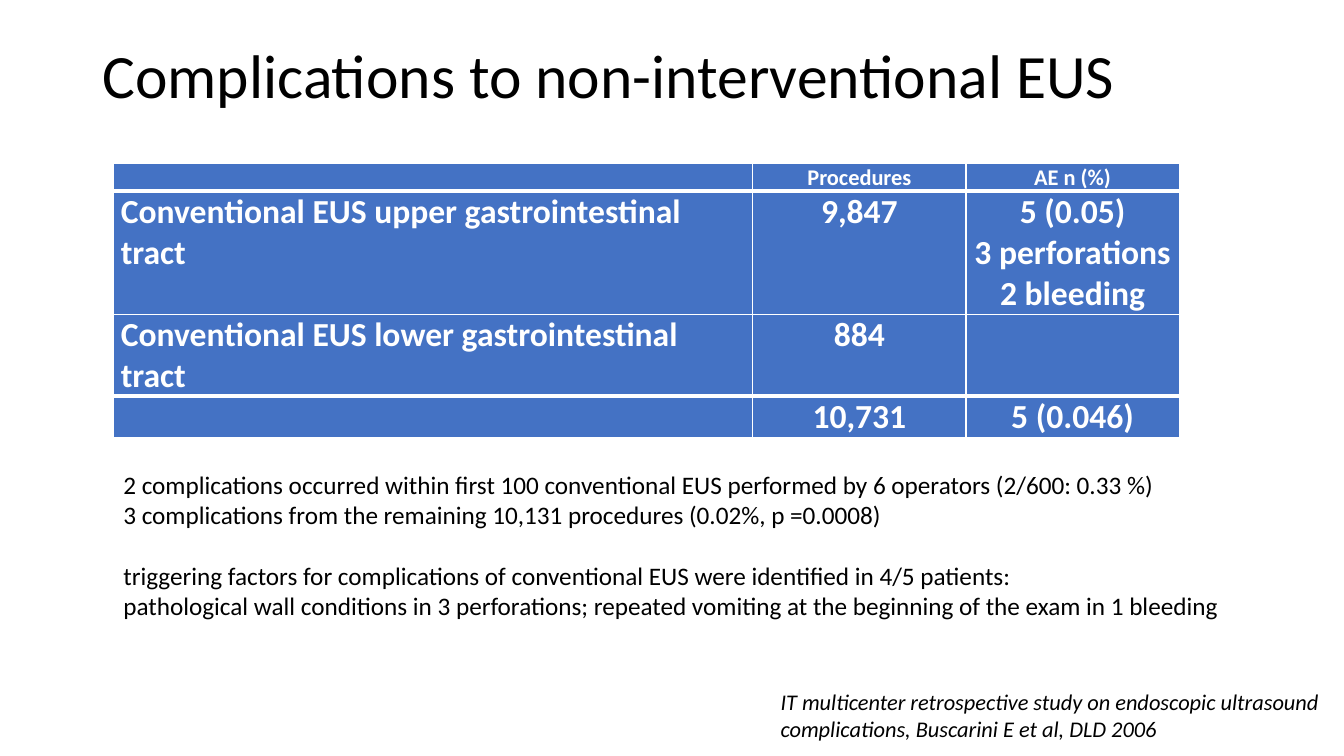
from lxml import etree
from pptx import Presentation
from pptx.dml.color import RGBColor
from pptx.enum.text import MSO_ANCHOR, MSO_AUTO_SIZE, PP_ALIGN
from pptx.oxml.ns import qn
from pptx.util import Pt

LEFT, CENTER = PP_ALIGN.LEFT, PP_ALIGN.CENTER
TOP = MSO_ANCHOR.TOP
NO_FIT, GROW = MSO_AUTO_SIZE.NONE, MSO_AUTO_SIZE.SHAPE_TO_FIT_TEXT
PX = 9525  # EMU per px, 96 px to the inch
FONT = "Calibri"
BLACK, WHITE, BLUE = "000000", "FFFFFF", "4472C4"


def color(hex_code):
    return RGBColor.from_string(hex_code)


def write(frame, lines, size, ink=BLACK, align=LEFT, bold=False, italic=False):
    frame.text = "\n".join(lines)
    for para in frame.paragraphs:
        para.alignment = align
        para.font.name = FONT
        para.font.size = Pt(size)
        para.font.bold = bold
        para.font.italic = italic
        para.font.color.rgb = color(ink)


deck = Presentation()
deck.slide_width, deck.slide_height = 1280 * PX, 720 * PX
page = deck.slides.add_slide(deck.slide_layouts[5])

# Title
title = page.shapes.title
title.left, title.top, title.width, title.height = [n * PX for n in (88, 38, 1104, 139)]
write(title.text_frame, ["Complications to non-interventional EUS"], 44)
title.text_frame.auto_size = NO_FIT
title.text_frame.vertical_anchor = TOP
title.text_frame.paragraphs[0].line_spacing = 0.9

# Table of procedures and adverse events
ROWS = [
    ["", "Procedures", "AE n (%)"],
    ["Conventional EUS upper gastrointestinal tract", "9,847",
     "5 (0.05)\n3 perforations\n2 bleeding"],
    ["Conventional EUS lower gastrointestinal tract", "884", ""],
    ["", "10,731", "5 (0.046)"],
]
COLUMN_WIDTHS = [609, 203, 203]
ROW_HEIGHTS = [26, 117, 78, 39]
THICK_RULES = (1, 3)  # below the header and above the totals

table = page.shapes.add_table(
    len(ROWS), len(COLUMN_WIDTHS), 108 * PX, 156 * PX,
    sum(COLUMN_WIDTHS) * PX, sum(ROW_HEIGHTS) * PX).table
table.first_row = table.horz_banding = False
for column, width in zip(table.columns, COLUMN_WIDTHS):
    column.width = width * PX

for r, (values, height) in enumerate(zip(ROWS, ROW_HEIGHTS)):
    table.rows[r].height = height * PX
    size = 16 if r == 0 else 24
    for c, value in enumerate(values):
        cell = table.cell(r, c)
        cell.margin_left = cell.margin_right = 7 * PX
        cell.margin_top = cell.margin_bottom = 0
        write(cell.text_frame, value.split("\n"), size, WHITE,
              CENTER if c else LEFT, bold=True)
        if not value:  # an empty cell keeps the row's text size
            end = etree.SubElement(cell.text_frame.paragraphs[0]._p, qn("a:endParaRPr"))
            end.set("sz", str(size * 100))

        # Cell borders
        properties = cell._tc.get_or_add_tcPr()
        top = 3 if r in THICK_RULES else 1
        bottom = 3 if r + 1 in THICK_RULES else 1
        for side, weight in (("L", 1), ("R", 1), ("T", top), ("B", bottom)):
            line = etree.SubElement(properties, qn("a:ln" + side), w=str(Pt(weight)))
            paint = etree.SubElement(line, qn("a:solidFill"))
            etree.SubElement(paint, qn("a:srgbClr"), val=WHITE)
        cell.fill.solid()
        cell.fill.fore_color.rgb = color(BLUE)

# Source of the study
source = page.shapes.add_textbox(734 * PX, 651 * PX, 588 * PX, 61 * PX).text_frame
source.word_wrap = True
source.auto_size = GROW
write(source, ["IT multicenter retrospective study on endoscopic ultrasound "
               "complications, Buscarini E et al, DLD 2006"], 16, italic=True)

# Findings
findings = page.shapes.add_textbox(108 * PX, 442 * PX, 1076 * PX, 156 * PX).text_frame
findings.word_wrap = False
findings.auto_size = GROW
write(findings, [
    "2 complications occurred within first 100 conventional EUS performed by 6 operators (2/600: 0.33 %)",
    "3 complications from the remaining 10,131 procedures (0.02%, p =0.0008)",
    "triggering factors for complications of conventional EUS were identified in 4/5 patients:",
    "pathological wall conditions in 3 perforations; repeated vomiting at the beginning of the exam in 1 bleeding",
], 18)
findings.paragraphs[2].space_before = Pt(22)

deck.save("out.pptx")
